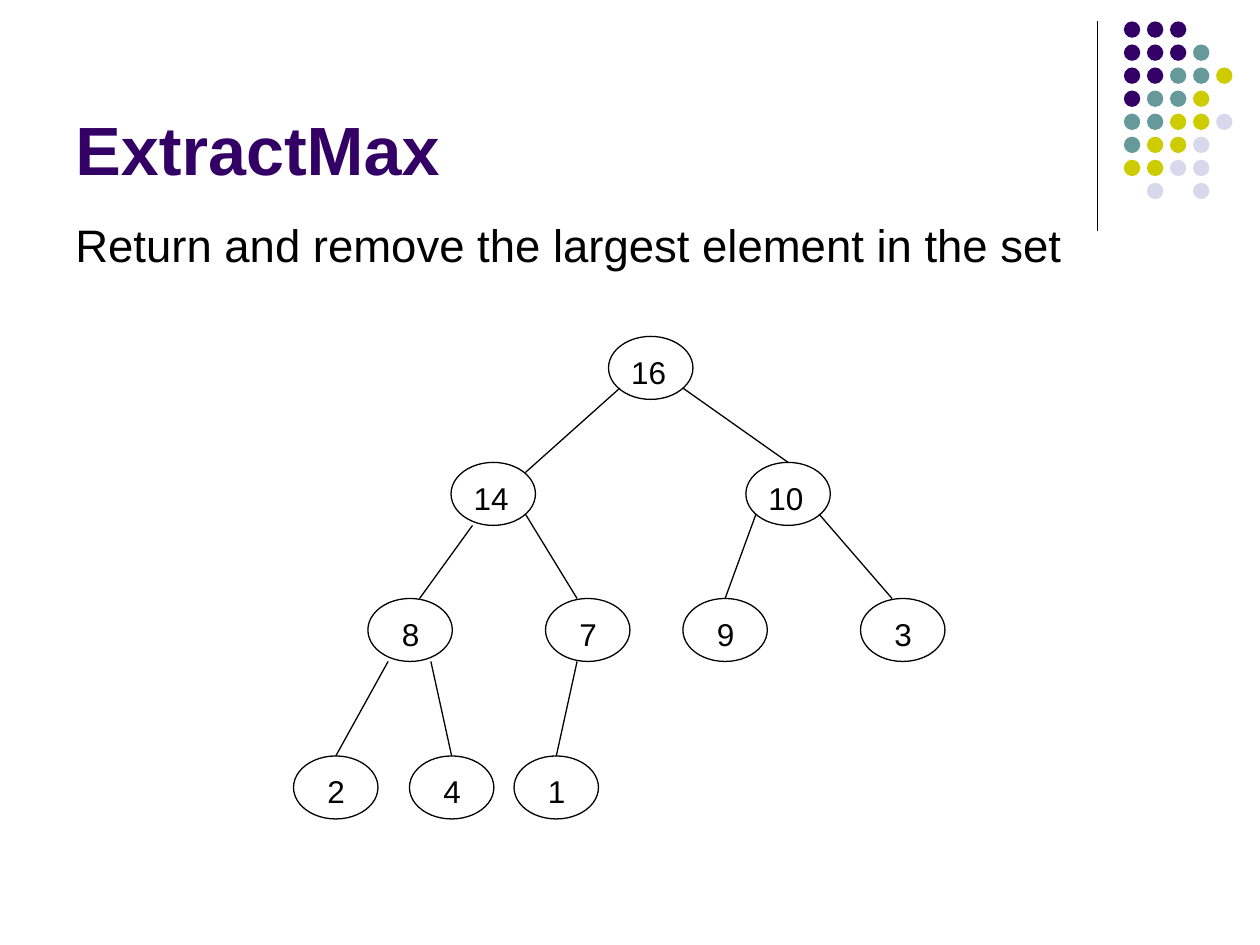
from typing import NamedTuple

from lxml import etree
from pptx import Presentation
from pptx.dml.color import RGBColor as Rgb
from pptx.enum.shapes import MSO_CONNECTOR as Link, MSO_SHAPE as Form
from pptx.enum.text import MSO_ANCHOR as Anchor, MSO_AUTO_SIZE as Fit
from pptx.oxml.ns import qn
from pptx.util import Inches, Pt

COLORS = {"ink": "000000", "P": "330066", "T": "669999", "Y": "CCCC00", "L": "D8D8EC"}
FONT = "Arial"
NODE_W, NODE_H = 0.67, 0.5
TOP = (NODE_W / 2, 0)
DOT, PITCH = 0.13, 0.183
DOT_X, DOT_Y = 8.92, 0.17
DOTS = ["PPP", "PPPT", "PPTTY", "PTTY", "TTYYL", "TYYL", "YYLL", " L L"]


class Node(NamedTuple):
    label: str
    x: float
    y: float


class Edge(NamedTuple):
    """Start and end are offsets from the top left of parent and child."""
    parent: str
    start: tuple[float, float]
    child: str
    end: tuple[float, float] = TOP


class Label(NamedTuple):
    text: str
    x: float
    y: float
    w: float
    h: float
    size: int
    color: str = "ink"
    bold: bool = False
    before: int = 0
    anchor: Anchor = Anchor.TOP
    fit: Fit = Fit.NONE


NODES = [
    Node("16", 4.83, 2.67),
    Node("14", 3.58, 3.67), Node("10", 5.92, 3.67),
    Node("8", 2.92, 4.75), Node("7", 4.33, 4.75),
    Node("9", 5.42, 4.75), Node("3", 6.83, 4.75),
    Node("2", 2.33, 6), Node("4", 3.25, 6), Node("1", 4.08, 6),
]
EDGES = [
    Edge("16", (0.09, 0.41), "14", (0.59, 0.08)),
    Edge("16", (0.59, 0.41), "10"),
    Edge("14", (0.17, 0.5), "8", (0.41, 0)),
    Edge("14", (0.59, 0.41), "7", (0.25, 0)),
    Edge("10", (0.08, 0.41), "9"),
    Edge("10", (0.58, 0.41), "3", (0.25, 0)),
    Edge("8", (0.16, 0.5), "2"),
    Edge("8", (0.5, 0.5), "4"),
    Edge("7", (0.25, 0.5), "1"),
]
TEXTS = [
    Label("ExtractMax", 0.5, 0.13, 8.25, 1.42, 39, "P", True, anchor=Anchor.BOTTOM),
    Label("Return and remove the largest element in the set",
          0.5, 1.67, 9, 0.67, 26, before=2),
]


def paint(name: str) -> Rgb:
    return Rgb.from_string(COLORS[name])


def add_text(shapes, label: Label) -> None:
    box = shapes.add_textbox(*map(Inches, (label.x, label.y, label.w, label.h)))
    frame = box.text_frame
    frame.word_wrap = True
    frame.auto_size = label.fit
    frame.vertical_anchor = label.anchor
    para = frame.paragraphs[0]
    para.text = label.text
    para.space_before = Pt(label.before)
    font = para.font
    font.name, font.size, font.bold = FONT, Pt(label.size), label.bold
    font.color.rgb = paint(label.color)


def add_oval(shapes, x: float, y: float, w: float, h: float, fill: str = ""):
    """Draw a filled oval, or an outlined one when no fill is named."""
    oval = shapes.add_shape(Form.OVAL, *map(Inches, (x, y, w, h)))
    oval.shadow.inherit = False
    if fill:
        oval.fill.solid()
        oval.fill.fore_color.rgb = paint(fill)
        oval.line.fill.background()
    else:
        oval.fill.background()
        oval.line.color.rgb = paint("ink")
        oval.line.width = Pt(0.75)
    return oval


def add_line(shapes, x1: float, y1: float, x2: float, y2: float):
    line = shapes.add_connector(Link.STRAIGHT, *map(Inches, (x1, y1, x2, y2)))
    line.line.color.rgb = paint("ink")
    line.line.width = Pt(0.75)
    etree.SubElement(line._element.spPr, qn("a:effectLst"))
    return line


def add_dots(shapes) -> None:
    for row, marks in enumerate(DOTS):
        for col, mark in enumerate(marks):
            if mark != " ":
                add_oval(shapes, DOT_X + col * PITCH, DOT_Y + row * PITCH,
                         DOT, DOT, mark)


def add_node(shapes, node: Node):
    oval = add_oval(shapes, node.x, node.y, NODE_W, NODE_H)
    inset = 0.08 if len(node.label) > 1 else 0.17
    add_text(shapes, Label(node.label, node.x + inset, node.y + 0.08, 0.58, 0.4,
                           18, before=2, fit=Fit.SHAPE_TO_FIT_TEXT))
    return oval


def add_tree(shapes) -> None:
    spots = {node.label: node for node in NODES}
    ovals = {node.label: add_node(shapes, node) for node in NODES}
    for edge in EDGES:
        head, tail = spots[edge.parent], spots[edge.child]
        line = add_line(shapes, head.x + edge.start[0], head.y + edge.start[1],
                        tail.x + edge.end[0], tail.y + edge.end[1])
        if edge.end == TOP:
            line.end_connect(ovals[edge.child], 0)


def main() -> None:
    deck = Presentation()
    deck.slide_width, deck.slide_height = Inches(10), Inches(7.5)
    shapes = deck.slides.add_slide(deck.slide_layouts[6]).shapes
    add_line(shapes, 8.71, 0.17, 8.71, 1.83)
    add_dots(shapes.add_group_shape().shapes)
    for label in TEXTS:
        add_text(shapes, label)
    add_tree(shapes.add_group_shape().shapes)
    deck.save("out.pptx")


if __name__ == "__main__":
    main()
